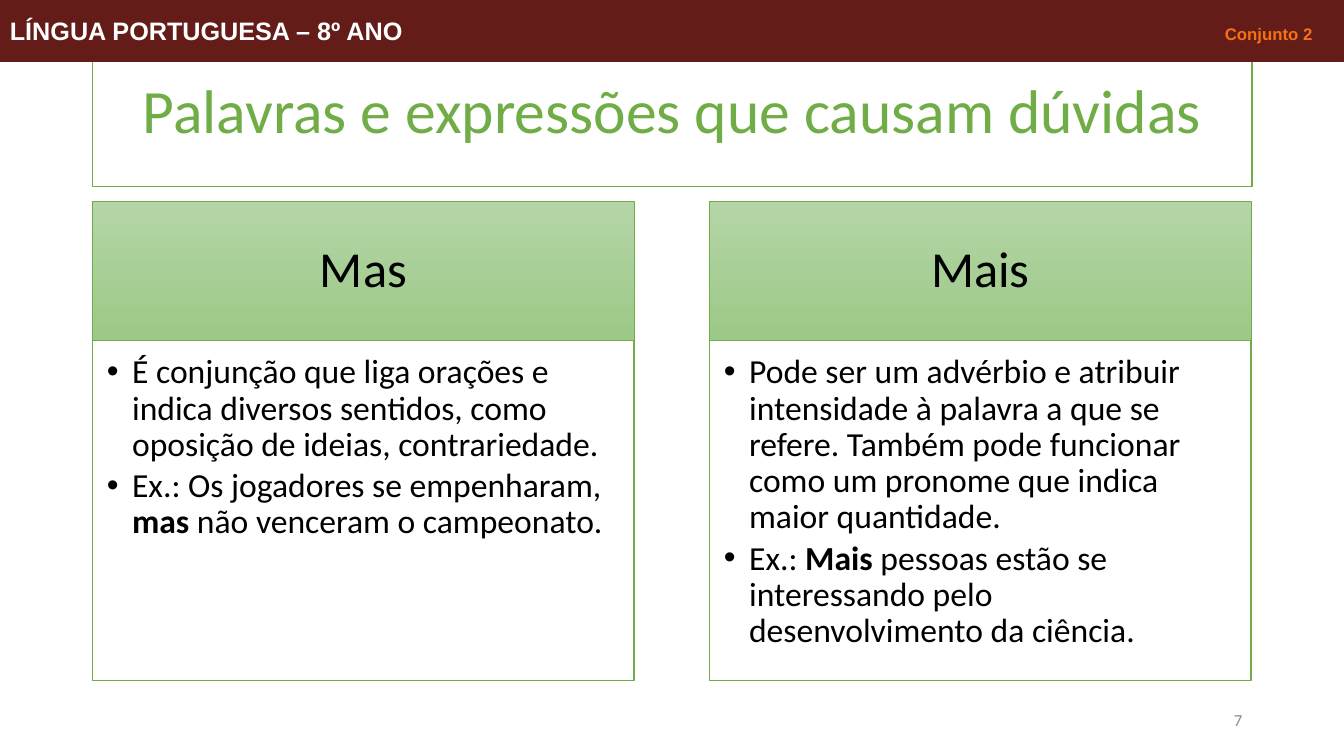
from dataclasses import dataclass

from lxml import etree
from pptx import Presentation
from pptx import util as u
from pptx.dml.color import RGBColor
from pptx.enum import shapes, text
from pptx.oxml import ns


@dataclass(frozen=True)
class Theme:
    body_font: str = "Calibri"
    band_font: str = "Arial"
    green: str = "70AD47"
    light_green: str = "B5D5A7"
    mid_green: str = "9CC987"
    maroon: str = "631C18"
    orange: str = "F47116"
    white: str = "FFFFFF"
    black: str = "000000"
    gray: str = "8C8C8C"
    title_size: int = 44
    heading_size: int = 36
    body_size: int = 24
    band_size: int = 18
    small_size: int = 12


class LessonPage:
    def __init__(self, page, theme):
        self.page = page
        self.theme = theme

    def style(self, span, size, color, bold=False, font=None):
        span.font.name = font or self.theme.body_font
        span.font.size = u.Pt(size)
        span.font.bold = bold
        span.font.color.rgb = RGBColor.from_string(color)

    def panel(self, place, fill, line, line_width=1.0):
        box = self.page.shapes.add_shape(
            shapes.MSO_SHAPE.RECTANGLE, *map(u.Inches, place))
        box.shadow.inherit = False
        if isinstance(fill, tuple):
            box.fill.gradient()
            box.fill.gradient_angle = 270
            for stop, color in zip(box.fill.gradient_stops, fill):
                stop.color.rgb = RGBColor.from_string(color)
        else:
            box.fill.solid()
            box.fill.fore_color.rgb = RGBColor.from_string(fill)
        box.line.color.rgb = RGBColor.from_string(line)
        box.line.width = u.Pt(line_width)
        return box

    def label(self, box, words, size, color, align=text.PP_ALIGN.CENTER):
        frame = box.text_frame
        frame.word_wrap = True
        frame.vertical_anchor = text.MSO_ANCHOR.MIDDLE
        frame.text = words
        para = frame.paragraphs[0]
        para.alignment = align
        para.line_spacing = 0.9
        self.style(para.runs[0], size, color)

    def title(self, place, words):
        box = self.panel(place, self.theme.white, self.theme.green)
        self.label(box, words, self.theme.title_size, self.theme.green)

    def heading(self, place, words):
        gradient = (self.theme.light_green, self.theme.mid_green)
        box = self.panel(place, gradient, self.theme.green, 0.5)
        self.label(box, words, self.theme.heading_size, self.theme.black)

    def bullets(self, place, items):
        box = self.panel(place, self.theme.white, self.theme.green)
        frame = box.text_frame
        frame.vertical_anchor = text.MSO_ANCHOR.TOP
        frame.margin_left = frame.margin_top = u.Inches(0.14)
        frame.margin_right = u.Inches(0.19)
        frame.margin_bottom = u.Inches(0.21)
        for index, pieces in enumerate(items):
            para = frame.add_paragraph() if index else frame.paragraphs[0]
            para.alignment = text.PP_ALIGN.LEFT
            para.line_spacing = 0.9
            para.space_after = u.Pt(0.15 * self.theme.body_size)
            settings = para._p.get_or_add_pPr()
            settings.set("marL", str(u.Inches(0.25)))
            settings.set("indent", str(-u.Inches(0.25)))
            etree.SubElement(settings, ns.qn("a:buFont"), typeface="Arial")
            etree.SubElement(settings, ns.qn("a:buChar"), char="•")
            for position, piece in enumerate(pieces):
                span = para.add_run()
                span.text = piece
                self.style(span, self.theme.body_size, self.theme.black,
                           bold=position == 1)

    def band(self, place, subject, group):
        box = self.panel(place, self.theme.maroon, self.theme.maroon, 0.75)
        box.text_frame.vertical_anchor = text.MSO_ANCHOR.MIDDLE
        para = box.text_frame.paragraphs[0]
        para.alignment = text.PP_ALIGN.LEFT
        tabs = etree.SubElement(para._p.get_or_add_pPr(), ns.qn("a:tabLst"))
        etree.SubElement(tabs, ns.qn("a:tab"), pos=str(u.Inches(12.92)), algn="r")
        for words, size, color in (
            (subject + "\t", self.theme.band_size, self.theme.white),
            (group, self.theme.small_size, self.theme.orange),
        ):
            span = para.add_run()
            span.text = words
            self.style(span, size, color, True, self.theme.band_font)

    def page_number(self, place, number):
        box = self.page.shapes.add_textbox(*map(u.Inches, place))
        self.label(box, number, self.theme.small_size, self.theme.gray,
                   text.PP_ALIGN.RIGHT)


COLUMNS = (
    ("Mas", (
        ("É conjunção que liga orações e indica diversos sentidos, como "
         "oposição de ideias, contrariedade.",),
        ("Ex.: Os jogadores se empenharam, ", "mas",
         " não venceram o campeonato."),
    )),
    ("Mais", (
        ("Pode ser um advérbio e atribuir intensidade à palavra a que se "
         "refere. Também pode funcionar como um pronome que indica maior "
         "quantidade.",),
        ("Ex.: ", "Mais",
         " pessoas estão se interessando pelo desenvolvimento da ciência."),
    )),
)


def main():
    deck = Presentation()
    deck.slide_width = u.Inches(13.33)
    deck.slide_height = u.Inches(7.5)
    lesson = LessonPage(deck.slides.add_slide(deck.slide_layouts[6]), Theme())

    left, width, pitch = 0.92, 5.37, 6.12
    lesson.title((left, 0.4, 11.5, 1.45),
                 "Palavras e expressões que causam dúvidas")
    for index, (word, items) in enumerate(COLUMNS):
        column_left = left + index * pitch
        lesson.heading((column_left, 2, width, 1.38), word)
        lesson.bullets((column_left, 3.38, width, 3.37), items)
    lesson.page_number((9.42, 6.95, 3, 0.4), "7")
    lesson.band((0, 0, 13.33, 0.61), "LÍNGUA PORTUGUESA – 8º ANO", "Conjunto 2")
    deck.save("out.pptx")


if __name__ == "__main__":
    main()
